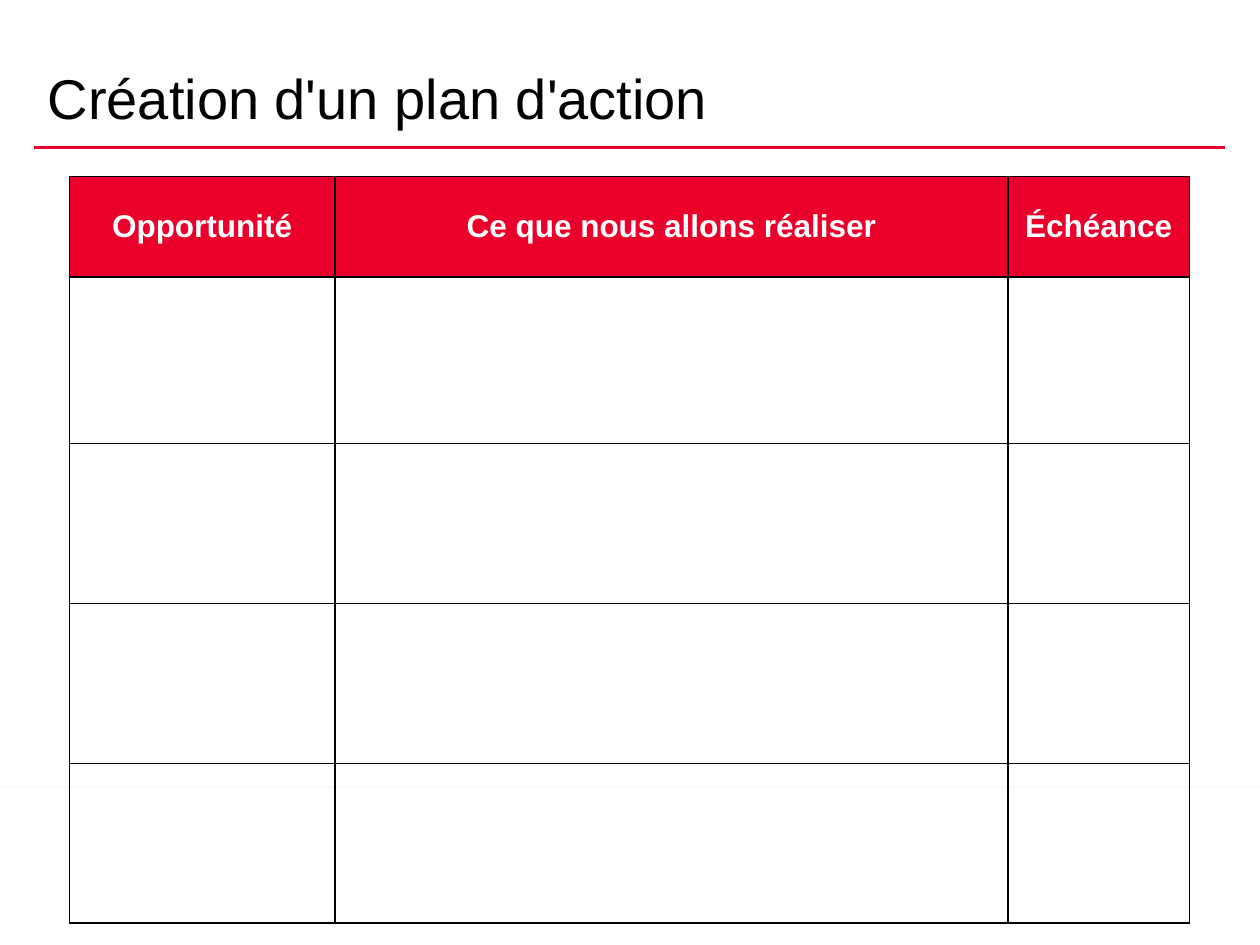
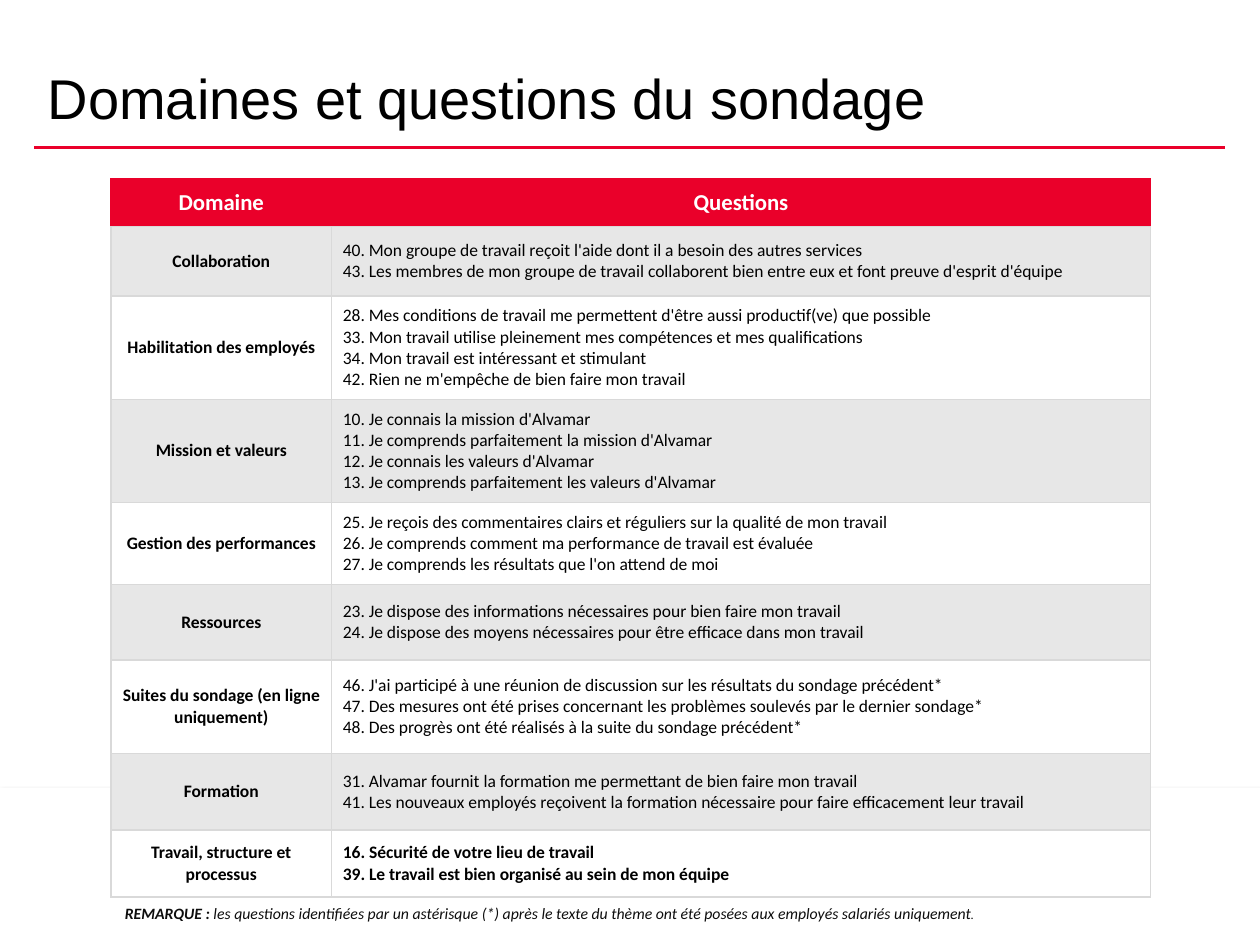
from lxml import etree
from pptx import Presentation
from pptx.dml.color import RGBColor
from pptx.enum.shapes import MSO_CONNECTOR as Line, MSO_SHAPE as Shape
from pptx.enum.text import MSO_ANCHOR as Anchor, PP_ALIGN as Align
from pptx.oxml import parse_xml
from pptx.oxml.ns import nsdecls, qn
from pptx.util import Pt

RED, WHITE, BLACK = "EA002A", "FFFFFF", "000000"
GRID, BAND, NOTE = "D9D9D9", "E7E7E7", "0D0D0D"

PLAN = ["Opportunité", "Ce que nous allons réaliser", "Échéance"]

# Domain, row height, questions
SURVEY = [
    ("Collaboration", 39.6, [
        "40. Mon groupe de travail reçoit l'aide dont il a besoin des autres services",
        "43. Les membres de mon groupe de travail collaborent bien entre eux et font preuve d'esprit d'équipe"]),
    ("Habilitation des employés", 59, [
        "28. Mes conditions de travail me permettent d'être aussi productif(ve) que possible",
        "33. Mon travail utilise pleinement mes compétences et mes qualifications",
        "34. Mon travail est intéressant et stimulant",
        "42. Rien ne m'empêche de bien faire mon travail"]),
    ("Mission et valeurs", 59, [
        "10. Je connais la mission d'Alvamar",
        "11. Je comprends parfaitement la mission d'Alvamar",
        "12. Je connais les valeurs d'Alvamar",
        "13. Je comprends parfaitement les valeurs d'Alvamar"]),
    ("Gestion des performances", 46.8, [
        "25. Je reçois des commentaires clairs et réguliers sur la qualité de mon travail",
        "26. Je comprends comment ma performance de travail est évaluée",
        "27. Je comprends les résultats que l'on attend de moi"]),
    ("Ressources", 43.2, [
        "23. Je dispose des informations nécessaires pour bien faire mon travail",
        "24. Je dispose des moyens nécessaires pour être efficace dans mon travail"]),
    ("Suites du sondage (en ligne uniquement)", 53.3, [
        "46. J'ai participé à une réunion de discussion sur les résultats du sondage précédent*",
        "47. Des mesures ont été prises concernant les problèmes soulevés par le dernier sondage*",
        "48. Des progrès ont été réalisés à la suite du sondage précédent*"]),
    ("Formation", 43.9, [
        "31. Alvamar fournit la formation me permettant de bien faire mon travail",
        "41. Les nouveaux employés reçoivent la formation nécessaire pour faire efficacement leur travail"]),
    ("Travail, structure et processus", 38.2, [
        "16. Sécurité de votre lieu de travail",
        "39. Le travail est bien organisé au sein de mon équipe"]),
]


def paint(target, color):
    """Give a fill, or the fill of a line, one solid colour."""
    target.solid()
    target.fore_color.rgb = RGBColor.from_string(color)


def style(font, name, size, color, bold=False):
    font.name, font.size, font.bold = name, Pt(size), bold
    font.color.rgb = RGBColor.from_string(color)


def add_band(slide):
    """Add the white foot band, whose soft shadow shows at its top edge."""
    band = slide.shapes.add_shape(Shape.RECTANGLE, 0, Pt(450.7), Pt(720), Pt(89.3))
    paint(band.fill, WHITE)
    paint(band.line.fill, WHITE)
    band.line.width = Pt(0.75)
    band._element.spPr.append(parse_xml(
        f'<a:effectLst {nsdecls("a")}><a:outerShdw blurRad="{Pt(3.1)}" '
        f'dist="{Pt(1.8)}" dir="5400000" rotWithShape="0"><a:srgbClr val="{BLACK}">'
        '<a:alpha val="35000"/></a:srgbClr></a:outerShdw></a:effectLst>'))


def add_rule(slide):
    rule = slide.shapes.add_connector(Line.STRAIGHT, Pt(19.5), Pt(84.2), Pt(699.9), Pt(84.2))
    paint(rule.line.fill, RED)
    rule.line.width = Pt(2)
    etree.SubElement(rule._element.spPr, qn("a:effectLst"))


def add_box(slide, left, top, width, height):
    box = slide.shapes.add_textbox(Pt(left), Pt(top), Pt(width), Pt(height))
    box.text_frame.word_wrap = True
    return box.text_frame


def add_slide(deck, title):
    """Add a slide with the shared band, rule and title."""
    slide = deck.slides.add_slide(deck.slide_layouts[6])
    add_band(slide)
    add_rule(slide)
    frame = add_box(slide, 20.2, 3.6, 648, 74.2)
    frame.vertical_anchor = Anchor.BOTTOM
    para = frame.paragraphs[0]
    para.text, para.line_spacing = title, 0.8
    style(para.font, "Arial", 32, BLACK)
    return slide


def add_grid(slide, left, top, cols, rows):
    """Add an unstyled table from its column widths and row heights."""
    frame = slide.shapes.add_table(
        len(rows), len(cols), Pt(left), Pt(top), Pt(sum(cols)), Pt(sum(rows)))
    table = frame.table
    table.horz_banding = False
    for col, width in zip(table.columns, cols):
        col.width = Pt(width)
    for row, height in zip(table.rows, rows):
        row.height = Pt(height)
    return table


def edge(cell, color, **other):
    """Draw the four borders; other names the sides with another colour."""
    props = cell._tc.get_or_add_tcPr()
    for spot, side in enumerate("LRTB"):
        props.insert(spot, parse_xml(
            f'<a:ln{side} {nsdecls("a")} w="{Pt(1)}"><a:solidFill>'
            f'<a:srgbClr val="{other.get(side, color)}"/></a:solidFill></a:ln{side}>'))


def fill_cell(cell, lines, fill, font, align=Align.CENTER):
    paint(cell.fill, fill)
    cell.vertical_anchor = Anchor.MIDDLE
    cell.text = "\n".join(lines)
    for para in cell.text_frame.paragraphs:
        para.alignment = align
        style(para.font, *font)


def add_plan(slide):
    table = add_grid(slide, 39.6, 100.8, [151.9, 384.5, 103.7], [57.6, 95] + [91.4] * 3)
    for cell in table.iter_cells():
        cell.fill.background()
        edge(cell, BLACK)
    for cell, head in zip(table.rows[0].cells, PLAN):
        fill_cell(cell, [head], RED, ("Arial", 18, WHITE, True))


def add_survey(slide):
    heights = [height for _, height, _ in SURVEY]
    table = add_grid(slide, 63.4, 102.2, [126, 468], [27.4] + heights)
    for cell in table.iter_cells():
        cell.margin_left = cell.margin_right = Pt(6.5)
        cell.margin_top = cell.margin_bottom = Pt(2.9)
    for cell, head in zip(table.rows[0].cells, ["Domaine", "Questions"]):
        fill_cell(cell, [head], RED, ("Calibri", 13, WHITE, True))
        edge(cell, RED, B=GRID)
    for row, (domain, _, lines) in enumerate(SURVEY, 1):
        fill = BAND if row % 2 else WHITE
        last = row == len(SURVEY)
        name, text = table.rows[row].cells
        fill_cell(name, [domain], fill, ("Calibri", 10, BLACK, True))
        fill_cell(text, lines, fill, ("Calibri", 10, BLACK, last), Align.LEFT)
        edge(name, GRID)
        edge(text, GRID)


def add_note(slide):
    frame = add_box(slide, 63.4, 511.9, 525.6, 23)
    frame.margin_left = frame.margin_right = Pt(7.9)
    frame.margin_top = frame.margin_bottom = Pt(4.3)
    para = frame.paragraphs[0]
    for text, size, bold, slant in [
            ("REMARQUE : ", 9, True, True),
            ("les questions identifiées par un astérisque (*) après le texte du thème "
             "ont été posées aux employés salariés uniquement", 9, False, True),
            (".", 7, False, False)]:
        run = para.add_run()
        run.text = text
        style(run.font, "Calibri", size, NOTE, bold)
        run.font.italic = slant


def main():
    deck = Presentation()
    deck.slide_width, deck.slide_height = Pt(720), Pt(540)
    add_plan(add_slide(deck, "Création d'un plan d'action"))
    survey = add_slide(deck, "Domaines et questions du sondage")
    add_note(survey)
    add_survey(survey)
    deck.save("out.pptx")


if __name__ == "__main__":
    main()
